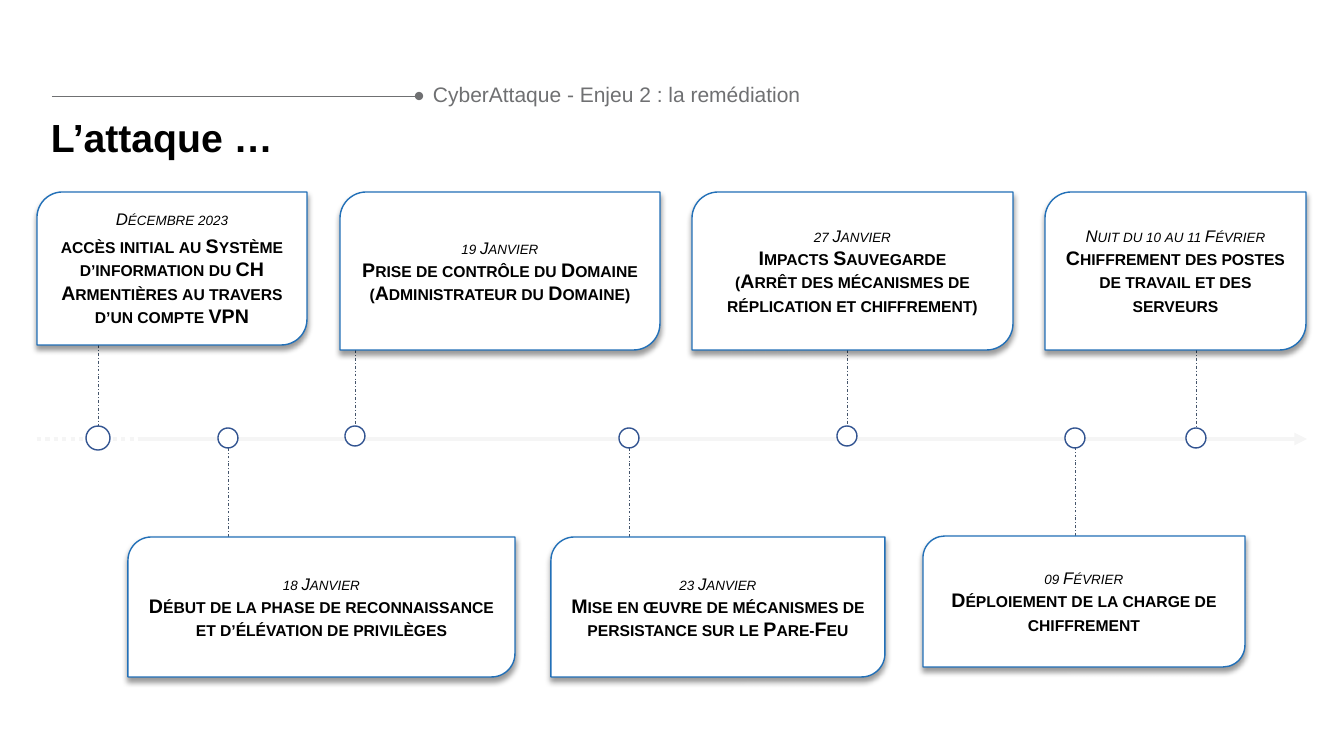
from lxml import etree
from pptx import Presentation
from pptx.dml.color import RGBColor
from pptx.enum.dml import MSO_LINE
from pptx.enum.shapes import MSO_CONNECTOR, MSO_SHAPE
from pptx.enum.text import MSO_ANCHOR, PP_ALIGN
from pptx.oxml.ns import qn
from pptx.util import Pt

PX = 914400 / 100.8
SLIDE_SIZE = (1344, 756)
AXIS_Y = 439
AXIS_COLOR = "F5F5F5"
TITLE = "L’attaque …"
SECTION = "CyberAttaque - Enjeu 2 : la remédiation"

# card box (left, top, width, height), marker (centre x, centre y, diameter), space after, date, lines
EVENTS = [
    ((37, 192, 270, 153), (98, 438, 24), 3.2, "Décembre 2023",
     ["accès initial au Système d’information du CH Armentières au travers d’un compte VPN"]),
    ((128, 537, 387, 140), (228, 438, 20), 0, "18 Janvier",
     ["Début de la phase de reconnaissance et d’élévation de privilèges"]),
    ((340, 192, 320, 158), (355, 436, 20), 0, "19 Janvier",
     ["Prise de contrôle du Domaine (Administrateur du Domaine)"]),
    ((551, 537, 334, 140), (629, 438, 20), 0, "23 Janvier",
     ["Mise en œuvre de mécanismes de persistance sur le Pare-Feu"]),
    ((692, 192, 321, 158), (847, 436, 20), 0, "27 Janvier",
     ["Impacts Sauvegarde", "(Arrêt des mécanismes de réplication et chiffrement)"]),
    ((923, 536, 322, 131), (1075, 438, 20), 0, "09 Février",
     ["Déploiement de la charge de chiffrement"]),
    ((1045, 192, 261, 158), (1196, 438, 20), 0, "Nuit du 10 au 11 Février",
     ["Chiffrement des postes de travail et des serveurs"]),
]
DATE_FORMAT = {"size": Pt(12), "italic": True, "bold": False}
EVENT_FORMAT = {"size": Pt(14), "italic": False, "bold": True}


def px(*lengths):
    return [round(length * PX) for length in lengths]


def rgb(color):
    return RGBColor.from_string(color)


def set_attributes(target, values):
    for name, value in values.items():
        setattr(target, name, value)


def set_frame(frame, anchor, side=0, top=0):
    set_attributes(frame, {
        "word_wrap": True, "vertical_anchor": anchor,
        "margin_left": px(side)[0], "margin_right": px(side)[0],
        "margin_top": px(top)[0], "margin_bottom": px(top)[0]})


def write(paragraph, text, color, font_format, small_caps=False):
    run = paragraph.add_run()
    run.text = text
    set_attributes(run.font, {"name": "Arial", **font_format})
    run.font.color.rgb = rgb(color)
    if small_caps:
        run.font._element.set("cap", "small")


def add_line(slide, start, end, color, width, dash=None, tail=None):
    line = slide.shapes.add_connector(MSO_CONNECTOR.STRAIGHT, *px(*start, *end))
    line.line.color.rgb = rgb(color)
    line.line.width = Pt(width)
    if dash:
        line.line.dash_style = dash
    if tail:
        etree.SubElement(line.line._get_or_add_ln(), qn("a:tailEnd"), type=tail)
    etree.SubElement(line._element.spPr, qn("a:effectLst"))


def add_outlined(slide, kind, box, color):
    shape = slide.shapes.add_shape(kind, *px(*box))
    shape.shadow.inherit = False
    shape.fill.solid()
    shape.fill.fore_color.rgb = rgb("FFFFFF")
    shape.line.color.rgb = rgb(color)
    shape.line.width = Pt(1)
    return shape


def add_drop_shadow(shape):
    effects = shape._element.spPr.find(qn("a:effectLst"))
    shadow = etree.SubElement(effects, qn("a:outerShdw"), blurRad=str(Pt(4)),
                              dist=str(Pt(3)), dir="5400000", algn="t", rotWithShape="0")
    color = etree.SubElement(shadow, qn("a:srgbClr"), val="000000")
    etree.SubElement(color, qn("a:alpha"), val="40000")


def add_card(slide, box, space_after, date, lines):
    card = add_outlined(slide, MSO_SHAPE.ROUND_2_DIAG_RECTANGLE, box, "2270B8")
    add_drop_shadow(card)
    frame = card.text_frame
    set_frame(frame, MSO_ANCHOR.MIDDLE, side=7)
    for index, text in enumerate([date, *lines]):
        paragraph = frame.add_paragraph() if index else frame.paragraphs[0]
        paragraph.alignment = PP_ALIGN.CENTER
        paragraph.space_after = Pt(space_after)
        write(paragraph, text, "000000", EVENT_FORMAT if index else DATE_FORMAT, small_caps=True)


def add_header(slide):
    add_line(slide, (52, 96), (419, 96), "6F7072", 0.5, tail="oval")
    section = slide.shapes.add_textbox(*px(423, 79, 776, 33))
    set_frame(section.text_frame, MSO_ANCHOR.TOP, side=10, top=5)
    section.text_frame.paragraphs[0].line_spacing = 0.9
    write(section.text_frame.paragraphs[0], SECTION, "6F7072", {"size": Pt(15)})

    title = slide.shapes.title
    set_attributes(title, dict(zip(("left", "top", "width", "height"), px(51, 113, 620, 53))))
    set_frame(title.text_frame, MSO_ANCHOR.MIDDLE)
    paragraph = title.text_frame.paragraphs[0]
    set_attributes(paragraph, {"alignment": PP_ALIGN.LEFT, "line_spacing": 0.9})
    write(paragraph, TITLE, "000000", {"size": Pt(28), "bold": True})


def add_timeline(slide):
    add_line(slide, (37, AXIS_Y), (141, AXIS_Y), AXIS_COLOR, 3, dash=MSO_LINE.ROUND_DOT)
    add_line(slide, (138, AXIS_Y), (1307, AXIS_Y), AXIS_COLOR, 3, tail="triangle")
    for box, (x, y, diameter), space_after, date, lines in EVENTS:
        left, top, width, height = box
        card_edge = top + height if top < AXIS_Y else top
        add_line(slide, (x, card_edge), (x, y), "44546A", 0.5, dash=MSO_LINE.DASH_DOT)
        radius = diameter / 2
        add_outlined(slide, MSO_SHAPE.OVAL, (x - radius, y - radius, diameter, diameter), "325491")
        add_card(slide, box, space_after, date, lines)


def main():
    presentation = Presentation()
    presentation.slide_width, presentation.slide_height = px(*SLIDE_SIZE)
    slide = presentation.slides.add_slide(presentation.slide_layouts[5])
    add_header(slide)
    add_timeline(slide)
    presentation.save("out.pptx")


if __name__ == "__main__":
    main()
